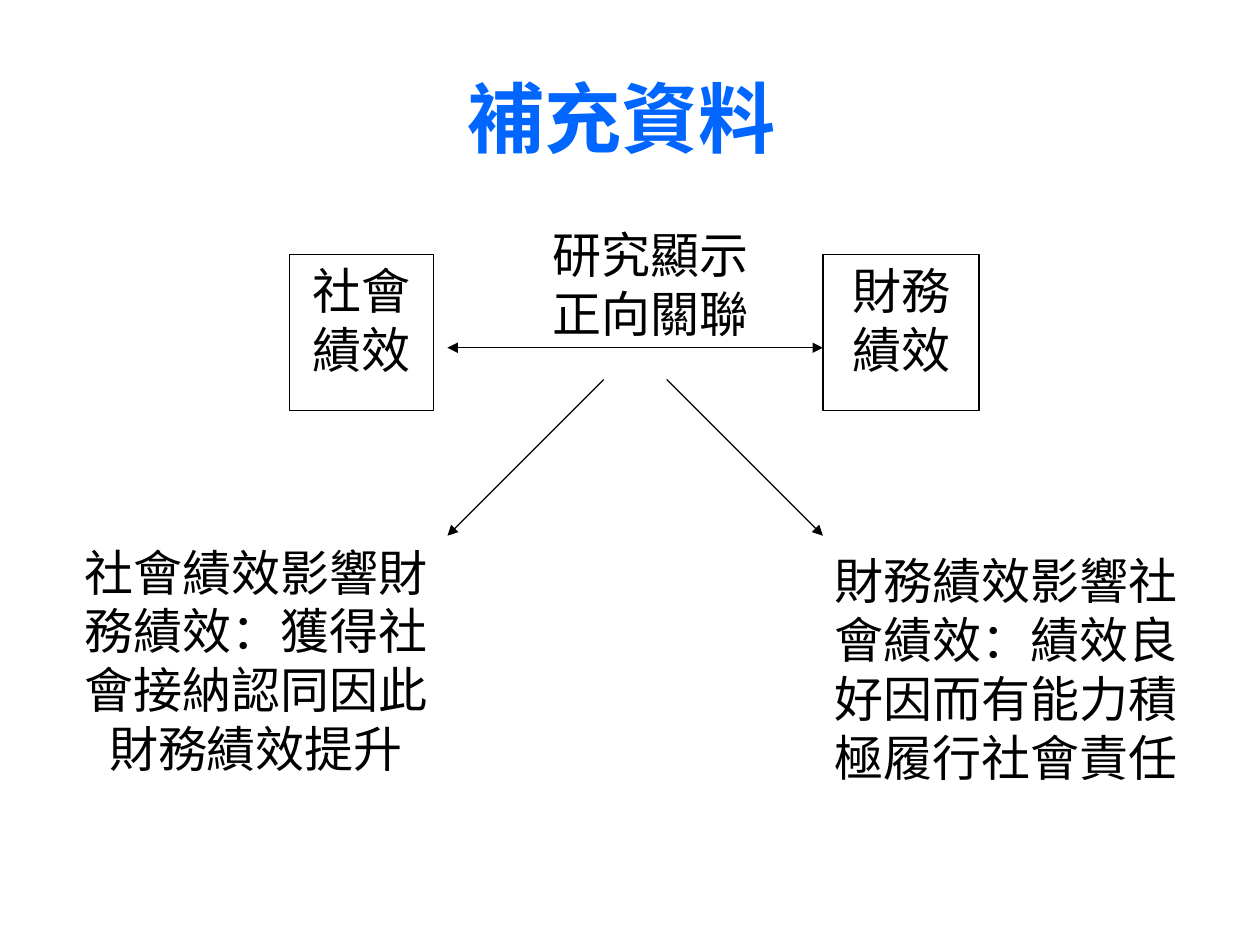
"""Build a slide relating social performance to financial performance."""
import pptx
import pptx.dml.color
import pptx.enum.shapes
import pptx.enum.text
import pptx.oxml
import pptx.oxml.ns
import pptx.util

Cm = pptx.util.Cm
Pt = pptx.util.Pt


def colour(value):
    return pptx.dml.color.RGBColor.from_string(value)


def format_text(frame, size, value, bold=False):
    frame.word_wrap = True
    paragraph = frame.paragraphs[0]
    paragraph.alignment = pptx.enum.text.PP_ALIGN.CENTER
    for run in paragraph.runs:
        run.font.name = "Times New Roman"
        run.font.size = Pt(size)
        run.font.bold = bold
        run.font.color.rgb = colour(value)


presentation = pptx.Presentation()
presentation.slide_width = Cm(25.4)
presentation.slide_height = Cm(19.05)
slide = presentation.slides.add_slide(presentation.slide_layouts[5])

heading = slide.shapes.title
heading.left, heading.top, heading.width, heading.height = Cm(1.27), Cm(0.76), Cm(22.86), Cm(3.18)
heading.text_frame.text = "補充資料 "
heading.text_frame.vertical_anchor = pptx.enum.text.MSO_ANCHOR.MIDDLE
format_text(heading.text_frame, 44, "0066FF", bold=True)

statements = [
    ("社會績效", 5.84, 5.13, 2.9, 3.15, 0.25, True),
    ("財務績效", 16.59, 5.13, 3.15, 3.15, 0.25, True),
    ("財務績效影響社會績效：績效良好因而有能力積極履行社會責任", 16.59, 10.97, 7.37, 4.93, 0.05, False),
    ("社會績效影響財務績效：獲得社會接納認同因此財務績效提升", 1.3, 10.8, 7.72, 4.93, 0.05, False),
]
for wording, left, top, width, height, side_margin, outlined in statements:
    statement = slide.shapes.add_shape(
        pptx.enum.shapes.MSO_SHAPE.RECTANGLE, Cm(left), Cm(top), Cm(width), Cm(height))
    statement.shadow.inherit = False
    statement.fill.solid()
    statement.fill.fore_color.rgb = colour("FFFFFF")
    if outlined:
        statement.line.color.rgb = colour("000000")
        statement.line.width = Pt(0.75)
    else:
        statement.line.fill.background()
    frame = statement.text_frame
    frame.text = wording
    frame.vertical_anchor = pptx.enum.text.MSO_ANCHOR.TOP
    frame.margin_left = frame.margin_right = Cm(side_margin)
    frame.margin_top = frame.margin_bottom = Cm(0.13)
    format_text(frame, 28, "000000")

finding = slide.shapes.add_textbox(Cm(10.9), Cm(4.52), Cm(4.42), Cm(2.49)).text_frame
finding.text = "研究顯示正向關聯"
finding.margin_left = finding.margin_right = Cm(0.15)
finding.margin_top, finding.margin_bottom = 0, Cm(0.13)
format_text(finding, 28, "000000")

arrows = [
    (9.02, 7.01, 16.59, 7.01, ["headEnd", "tailEnd"]),
    (12.17, 7.65, 9.02, 10.8, ["tailEnd"]),
    (13.44, 7.65, 16.59, 10.8, ["tailEnd"]),
]
for start_x, start_y, end_x, end_y, ends in arrows:
    arrow = slide.shapes.add_connector(
        pptx.enum.shapes.MSO_CONNECTOR.STRAIGHT, Cm(start_x), Cm(start_y), Cm(end_x), Cm(end_y))
    arrow.line.color.rgb = colour("000000")
    arrow.line.width = Pt(0.75)
    outline = arrow.line._get_or_add_ln()
    for end in ends:
        outline.append(pptx.oxml.parse_xml(
            f'<a:{end} {pptx.oxml.ns.nsdecls("a")} type="triangle"/>'))
    arrow._element.spPr.append(pptx.oxml.parse_xml(
        f'<a:effectLst {pptx.oxml.ns.nsdecls("a")}/>'))

presentation.save("out.pptx")
